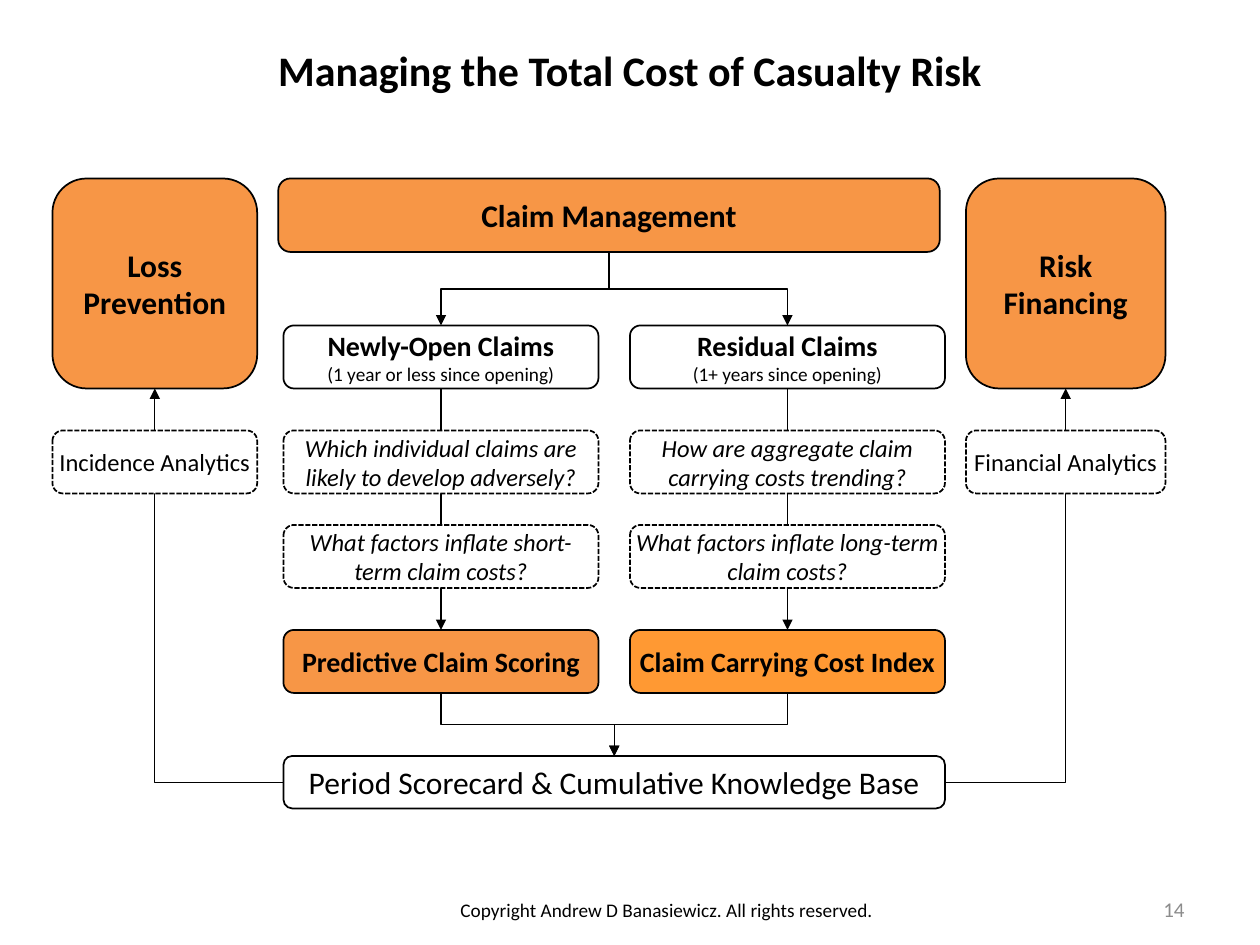
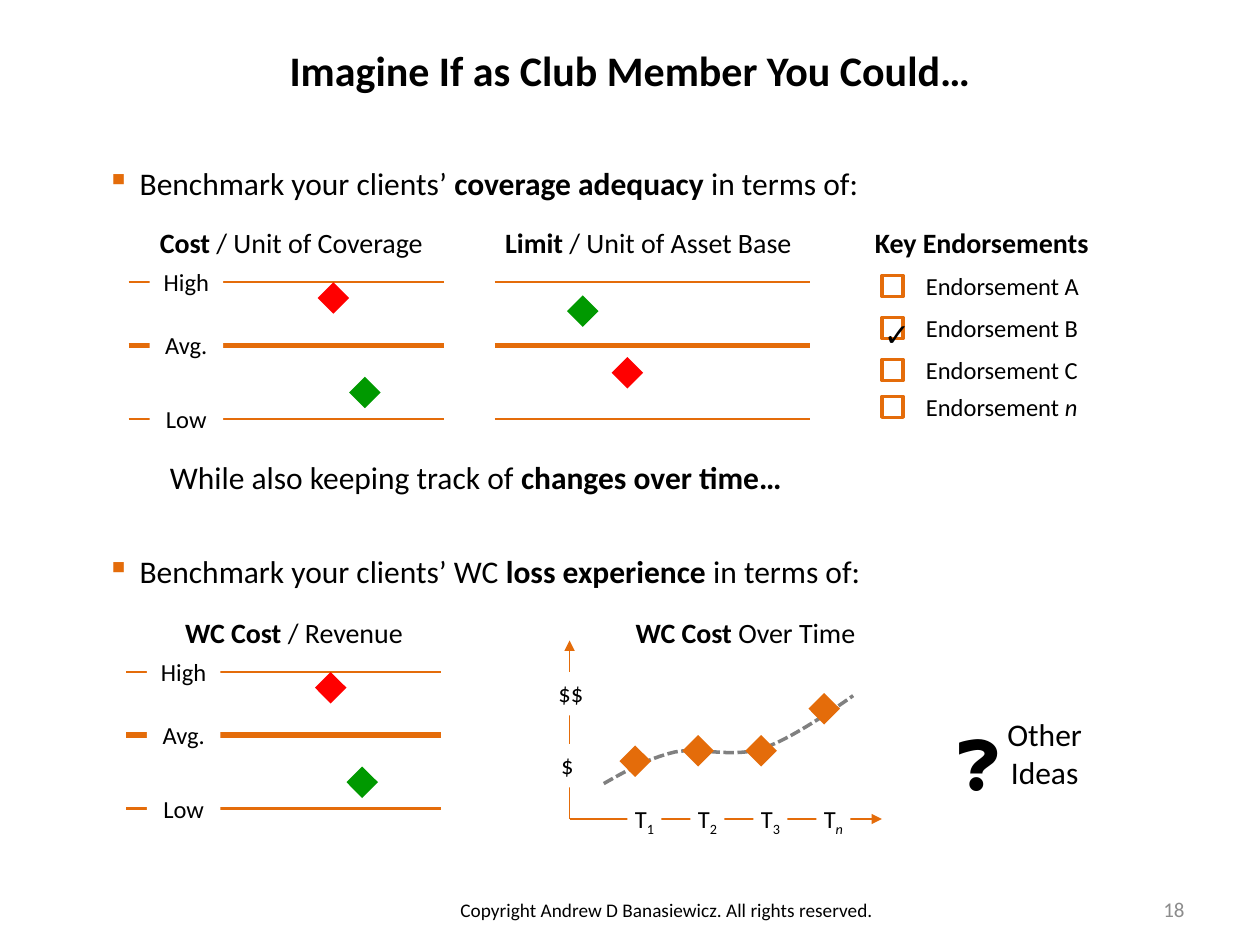
from lxml import etree
from pptx import Presentation
from pptx.dml.color import RGBColor
from pptx.enum.dml import MSO_LINE
from pptx.enum.shapes import MSO_CONNECTOR, MSO_SHAPE
from pptx.enum.text import MSO_ANCHOR, PP_ALIGN
from pptx.oxml.ns import qn
from pptx.util import Pt

PX = 9525
FONT = "Calibri"
BLACK = RGBColor(0x00, 0x00, 0x00)
WHITE = RGBColor(0xFF, 0xFF, 0xFF)
GREY = RGBColor(0x8C, 0x8C, 0x8C)
TREND = RGBColor(0x80, 0x80, 0x80)
PEACH = RGBColor(0xF7, 0x96, 0x46)
AMBER = RGBColor(0xFF, 0x99, 0x33)
RUST = RGBColor(0xE4, 0x6C, 0x0A)
RED = RGBColor(0xFF, 0x00, 0x00)
GREEN = RGBColor(0x00, 0x99, 0x00)
LEFT, MID, RIGHT = PP_ALIGN.LEFT, PP_ALIGN.CENTER, PP_ALIGN.RIGHT
ROUND, RECT, GEM = MSO_SHAPE.ROUNDED_RECTANGLE, MSO_SHAPE.RECTANGLE, MSO_SHAPE.DIAMOND
UPPER, CENTRE = MSO_ANCHOR.TOP, MSO_ANCHOR.MIDDLE
DASH = MSO_LINE.SQUARE_DOT
TOP, WEST, BASE, EAST = range(4)


def put(area, kind, spot, rows=(), align=MID, fill=None, line=None, wide=1,
        dash=None, slim=False, anchor=UPPER, ink=BLACK):
    place = [n * PX for n in spot]
    if kind is None:
        item = area.add_textbox(*place)
    else:
        item = area.add_shape(kind, *place)
        item.shadow.inherit = False
        if fill is None:
            item.fill.background()
        else:
            item.fill.solid()
            item.fill.fore_color.rgb = fill
        if line is None:
            item.line.fill.background()
        else:
            item.line.color.rgb = line
            item.line.width = Pt(wide)
            item.line.dash_style = dash
    frame = item.text_frame
    frame.word_wrap = True
    frame.vertical_anchor = anchor
    if slim:
        frame.margin_left = frame.margin_right = 0
    for n, row in enumerate(rows):
        para = frame.paragraphs[0] if n == 0 else frame.add_paragraph()
        para.alignment = align
        for text, size, style in row:
            run = para.add_run()
            run.text = text
            font = run.font
            font.name, font.size, font.color.rgb = FONT, Pt(size), ink
            font.bold = "b" in style
            font.italic = "i" in style
            if "s" in style:
                run._r.get_or_add_rPr().set("baseline", "-25000")
    return item


def wire(area, wide, ink=BLACK, spot=(0, 0, 0, 0), ends=None, bend=None, tail=True):
    kind = MSO_CONNECTOR.ELBOW if bend else MSO_CONNECTOR.STRAIGHT
    item = area.add_connector(kind, *[n * PX for n in spot])
    if ends:
        item.begin_connect(*ends[:2])
        item.end_connect(*ends[2:])
    item.line.color.rgb = ink
    item.line.width = Pt(wide)
    props = item._element.spPr
    if tail:
        etree.SubElement(item.line._get_or_add_ln(), qn("a:tailEnd"), type="triangle")
    etree.SubElement(props, qn("a:effectLst"))
    if bend == "corner":
        props.find(qn("a:prstGeom")).set("prst", "bentConnector2")
    if bend == "fork":
        x, y, w, h = item.left, item.top, item.width, item.height
        turn = props.find(qn("a:xfrm"))
        left = turn.flipH
        turn.flipH = not left
        turn.rot = 90 if left else 270
        item.left, item.top = x + (w - h) // 2, y + (h - w) // 2
        item.width, item.height = h, w


deck = Presentation()
deck.slide_width, deck.slide_height = 960 * PX, 720 * PX
areas = []
for title, page in (("Managing the Total Cost of Casualty Risk", "14"),
                    ("Imagine If as Club Member You Could…", "18")):
    area = deck.slides.add_slide(deck.slide_layouts[6]).shapes
    put(area, None, (688, 674, 224, 38), [[(page, 12, "")]], RIGHT, anchor=CENTRE, ink=GREY)
    put(area, None, (48, 29, 864, 60), [[(title, 24, "b")]])
    put(area, None, (320, 680, 376, 28),
        [[("Copyright Andrew D Banasiewicz. All rights reserved.", 11, "")]])
    areas.append(area)
flow, bench = areas

solid = dict(line=BLACK, anchor=CENTRE)
claim = put(flow, ROUND, (212, 136, 504, 56), [[("Claim Management", 18, "b")]],
            fill=PEACH, **solid)
score = put(flow, ROUND, (216, 576, 504, 40),
            [[("Period Scorecard & Cumulative Knowledge Base", 18, "")]], fill=WHITE, **solid)

sides = ((40, 156, "Loss Prevention", "Incidence Analytics", WEST),
         (736, 152, "Risk Financing", "Financial Analytics", EAST))
for x, w, goal, study, side in sides:
    block = put(flow, ROUND, (x, 136, w, 160), [[(goal, 18, "b")]], fill=PEACH, **solid)
    wire(flow, 0.75, ends=(score, side, block, BASE), bend="corner")
    put(flow, ROUND, (x, 328, w, 48), [[(study, 14, "")]], fill=WHITE, dash=DASH,
        slim=True, **solid)

tracks = (
    (216, "Newly-Open Claims", "(1 year or less since opening)",
     "Which individual claims are likely to develop adversely?",
     "What factors inflate short-term claim costs?", "Predictive Claim Scoring", PEACH),
    (480, "Residual Claims", "(1+ years since opening)",
     "How are aggregate claim carrying costs trending?",
     "What factors inflate long-term claim costs?", "Claim Carrying Cost Index", AMBER),
)
for x, name, age, first, second, result, tint in tracks:
    head = put(flow, ROUND, (x, 248, 240, 48), [[(name, 16, "b")], [(age, 11, "")]],
               fill=WHITE, **solid)
    foot = put(flow, ROUND, (x, 480, 240, 48), [[(result, 16, "b")]], fill=tint,
               slim=True, **solid)
    wire(flow, 1, ends=(claim, BASE, head, TOP), bend="fork")
    wire(flow, 0.75, ends=(head, BASE, foot, TOP))
    wire(flow, 0.75, ends=(foot, BASE, score, TOP), bend="fork")
    for y, ask in ((328, first), (400, second)):
        put(flow, ROUND, (x, y, 240, 48), [[(ask, 14, "i")]], fill=WHITE, dash=DASH,
            slim=True, **solid)

for y, w, lead, key in ((120, 608, "Benchmark your clients’ ", "coverage adequacy "),
                        (416, 616, "Benchmark your clients’ WC ", "loss experience ")):
    item = put(bench, None, (72, y, w, 38),
               [[(lead, 18, ""), (key, 18, "b"), ("in terms of:", 18, "")]], LEFT)
    props = item.text_frame.paragraphs[0]._p.get_or_add_pPr()
    props.set("marL", str(25 * PX))
    props.set("indent", str(-25 * PX))
    tint = etree.SubElement(props, qn("a:buClr"))
    etree.SubElement(tint, qn("a:srgbClr"), val=str(RUST))
    etree.SubElement(props, qn("a:buChar"), char="▪")
put(bench, None, (120, 344, 616, 38),
    [[("While also keeping track of ", 18, ""), ("changes over time…", 18, "b")]], LEFT)

heads = ((106, 167, 232, "Cost ", "/ Unit of Coverage"),
         (370, 167, 248, "Limit ", "/ Unit of Asset Base"),
         (632, 167, 232, "Key Endorsements", ""),
         (96, 464, 256, "WC Cost ", "/ Revenue"),
         (440, 464, 256, "WC Cost ", "Over Time"))
for x, y, w, key, rest in heads:
    row = [(key, 16, "b")]
    if rest:
        row.append((rest, 16, ""))
    put(bench, None, (x, y, w, 35), [row])

gauges = ((98, 215, True, (144, 0), (168, 72)),
          (377, 215, False, (89, 57), (55, 10)),
          (96, 512, True, (144, 0), (168, 72)))
for x, y, named, bad, good in gauges:
    for step, wide, name in ((0, 1.25, "High"), (48, 3, "Avg."), (104, 1.25, "Low")):
        wire(bench, wide, RUST, (x, y + step, x + 240, y + step), tail=False)
        if named:
            put(bench, RECT, (x + 16, y + step - 16, 56, 33), [[(name, 14, "")]], fill=WHITE)
    for (dx, dy), tint in ((bad, RED), (good, GREEN)):
        put(bench, GEM, (x + dx, y + dy, 24, 24), fill=tint)

for y, mark, style in ((210, "A", ""), (242, "B", ""), (274, "C", ""), (302, "n", "i")):
    put(bench, RECT, (672, y, 16, 16), line=RUST, wide=2)
    put(bench, RECT, (696, y - 8, 144, 33),
        [[("Endorsement ", 14, ""), (mark, 14, style)]], LEFT, fill=WHITE)
put(bench, None, (664, 235, 32, 38), [[("✓", 18, "")]], LEFT)

for end in ((672, 624), (434, 488)):
    wire(bench, 1, RUST, (434, 624) + end)
for n, (mark, style) in enumerate((("1", "s"), ("2", "s"), ("3", "s"), ("n", "is"))):
    put(bench, RECT, (478 + 48 * n, 608, 26, 33), [[("T", 14, ""), (mark, 14, style)]],
        fill=WHITE, slim=True)
for x, y, mark in ((418, 567, "$"), (416, 512, "$$")):
    put(bench, RECT, (x, y, 38, 33), [[(mark, 14, "")]], LEFT, fill=WHITE)

pen = bench.build_freeform(460, 597, scale=PX)
pen.add_line_segments(((476, 588), (493, 578), (514, 573), (534, 569), (558, 578),
                       (581, 570), (603, 564), (650, 530), (650, 530)), close=False)
curve = pen.convert_to_shape()
curve.shadow.inherit = False
curve.fill.background()
curve.line.color.rgb = TREND
curve.line.width = Pt(2)
curve.line.dash_style = DASH
trail = next(curve._element.iter(qn("a:path")))
legs = trail.findall(qn("a:lnTo"))
for n in range(0, len(legs), 3):
    arc = etree.SubElement(trail, qn("a:cubicBezTo"))
    for leg in legs[n:n + 3]:
        arc.append(leg[0])
        trail.remove(leg)
for n, y in enumerate((568, 560, 560, 528)):
    put(bench, GEM, (472 + 48 * n, y, 24, 24), fill=RUST)

group = bench.add_group_shape().shapes
put(group, None, (712, 545, 68, 68), [[("❓", 36, "")]])
put(group, None, (752, 540, 88, 68), [[("Other Ideas", 18, "")]])

deck.save("out.pptx")
